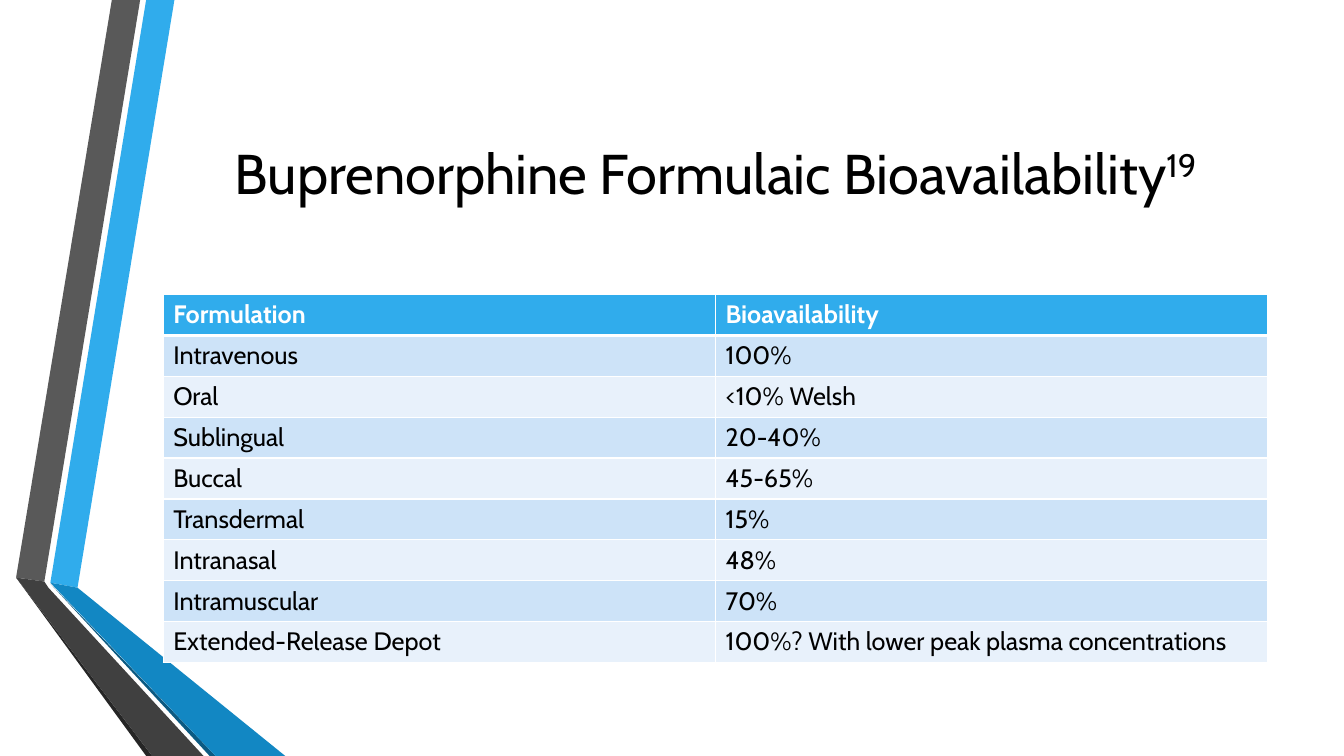
from lxml.etree import SubElement
from pptx import Presentation
from pptx.dml.color import RGBColor
from pptx.enum.text import MSO_ANCHOR as Anchor, PP_ALIGN as Align
from pptx.oxml.ns import qn
from pptx.util import Pt

RIBBONS = [
    ("30ACEC", [(36, 416.2), (55.4, 419.8), (124.6, 0), (104.4, 0)]),
    ("595959", [(100.1, 0), (79.9, 0), (11.5, 412.6), (31.7, 415.4)]),
    ("262626", [(11.5, 412.6), (104.4, 540), (108.7, 540)]),
    ("0C5A82", [(36, 416.9), (149.8, 540), (154.1, 540)]),
    ("1287C3", [(36, 416.2), (154.1, 540), (203.8, 540), (55.4, 419.8)]),
    ("404040", [(145.4, 540), (34.6, 419.8), (31.7, 415.4), (11.5, 412.6), (108.7, 540)]),
]
ROWS = [
    ("Formulation", "Bioavailability"),
    ("Intravenous", "100%"),
    ("Oral", "<10% Welsh"),
    ("Sublingual", "20-40%"),
    ("Buccal", "45-65%"),
    ("Transdermal", "15%"),
    ("Intranasal", "48%"),
    ("Intramuscular", "70%"),
    ("Extended-Release Depot", "100%? With lower peak plasma concentrations"),
]


def rgb(value):
    return RGBColor.from_string(value)


def add_text(p, text, size=18, color="000000", bold=False, font="Cabin", baseline=0):
    r = p.add_run()
    r.text = text
    r.font.name = font
    r.font.size = Pt(size)
    r.font.bold = bold
    r.font.color.rgb = rgb(color)
    if baseline:
        r.font._element.set("baseline", str(baseline * 1000))


class Deck:
    header, bands, rule = "30ACEC", ("E8F1FB", "CDE3F8"), "FFFFFF"

    def __init__(self):
        self.prs = Presentation()
        self.prs.slide_width, self.prs.slide_height = Pt(960), Pt(540)
        self.s = self.prs.slides.add_slide(self.prs.slide_layouts[5])

    def ribbon(self, color, points):
        (x, y), *rest = [(Pt(a), Pt(b)) for a, b in points]
        builder = self.s.shapes.build_freeform(x, y)
        builder.add_line_segments(rest, close=True)
        sp = builder.convert_to_shape()
        sp.shadow.inherit = False
        sp.fill.solid()
        sp.fill.fore_color.rgb = rgb(color)
        sp.line.fill.background()

    def title(self, text, note, left, top, width, height):
        sp = self.s.shapes.title
        sp.left, sp.top, sp.width, sp.height = map(Pt, (left, top, width, height))
        tf = sp.text_frame
        tf.word_wrap = True
        tf.vertical_anchor = Anchor.MIDDLE
        p = tf.paragraphs[0]
        p.alignment = Align.CENTER
        add_text(p, text, size=40)
        add_text(p, note, size=40, baseline=30)

    def border(self, cell, side, width):
        tc_pr = cell._tc.get_or_add_tcPr()
        ln = SubElement(tc_pr, qn(f"a:ln{side}"), w=str(Pt(width)))
        fill = SubElement(ln, qn("a:solidFill"))
        SubElement(fill, qn("a:srgbClr"), val=self.rule)

    def table(self, rows, left, top, width, row_height):
        size = map(Pt, (left, top, width, row_height * len(rows)))
        table = self.s.shapes.add_table(len(rows), len(rows[0]), *size).table
        for i, row in enumerate(rows):
            table.rows[i].height = Pt(row_height)
            is_header = i == 0
            for j, text in enumerate(row):
                cell = table.cell(i, j)
                for side in "LRTB":
                    thick = (i, side) in ((0, "B"), (1, "T"))
                    self.border(cell, side, 3 if thick else 1)
                cell.fill.solid()
                cell.fill.fore_color.rgb = rgb(self.header if is_header else self.bands[i % 2])
                color = "FFFFFF" if is_header else "000000"
                add_text(cell.text_frame.paragraphs[0], text, color=color, bold=is_header)


def main():
    deck = Deck()
    for color, points in RIBBONS:
        deck.ribbon(color, points)
    deck.title("Buprenorphine Formulaic Bioavailability", "19", 116.6, 54, 789, 138)
    deck.table(ROWS, 116.6, 210.4, 789, 29.2)
    deck.prs.save("out.pptx")


if __name__ == "__main__":
    main()
